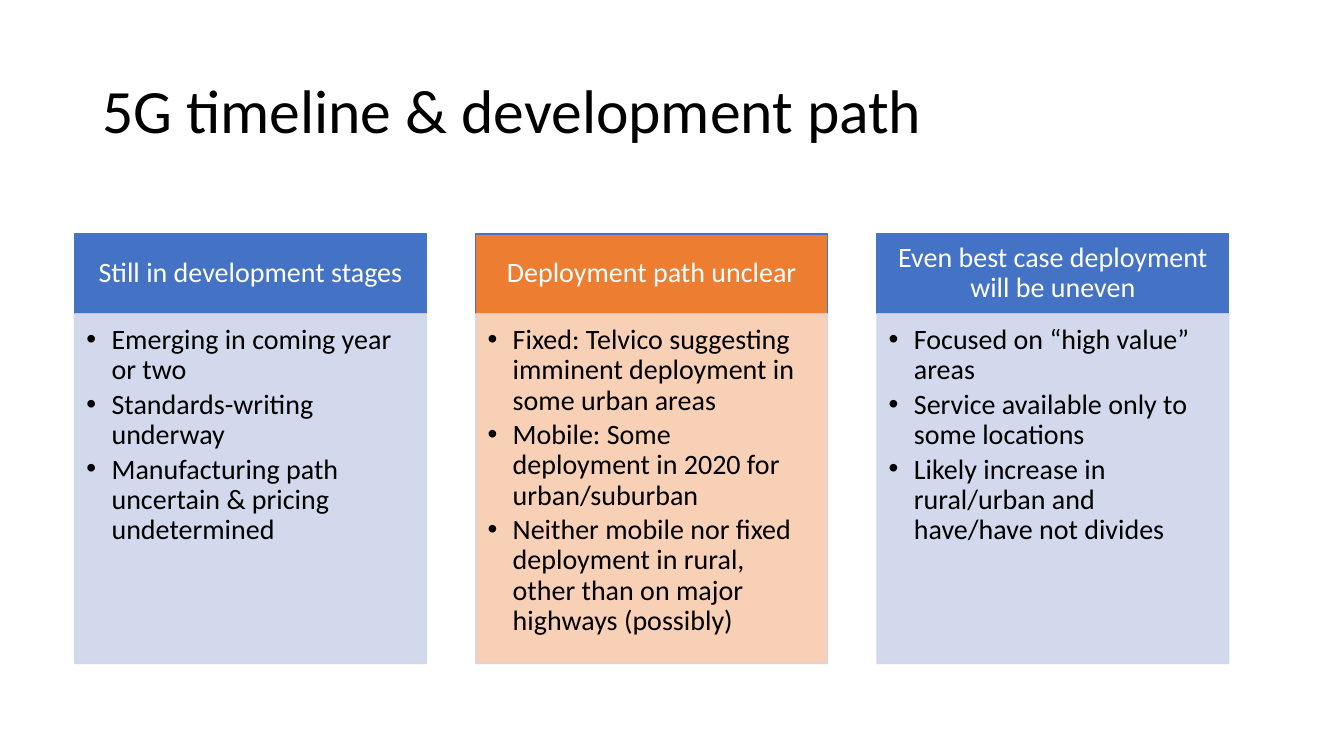
from dataclasses import dataclass

from lxml.etree import SubElement
from pptx import Presentation
from pptx.dml.color import RGBColor
from pptx.enum.shapes import MSO_SHAPE as Preset
from pptx.enum.text import MSO_ANCHOR as Anchor, MSO_AUTO_SIZE as AutoSize, PP_ALIGN as Align
from pptx.oxml.ns import qn
from pptx.shapes.autoshape import Shape
from pptx.slide import Slide
from pptx.text.text import TextFrame
from pptx.util import Pt

COLORS: dict[str, str] = {
    "black": "000000",
    "white": "FFFFFF",
    "blue": "4472C4",
    "orange": "ED7D31",
    "pale blue": "CFD5EA",
    "pale orange": "F8CBAD",
}
FONT = "Calibri"
COLUMN_LEFT = 53.28
COLUMN_PITCH = 286.56
COLUMN_WIDTH = 251.28
HEADER_TOP, HEADER_HEIGHT = 167.04, 57.1
BODY_TOP, BODY_HEIGHT = 224.14, 249.7
BULLET_INDENT = 18


@dataclass(frozen=True)
class Column:
    heading: str
    points: tuple[str, ...]
    header_fill: str = "blue"
    body_fill: str = "pale blue"


COLUMNS = (
    Column(
        "Still in development stages",
        (
            "Emerging in coming year or two",
            "Standards-writing underway",
            "Manufacturing path uncertain & pricing undetermined",
        ),
    ),
    Column(
        "Deployment path unclear",
        (
            "Fixed: Telvico suggesting imminent deployment in some urban areas",
            "Mobile: Some deployment in 2020 for urban/suburban",
            "Neither mobile nor fixed deployment in rural, other than on major highways (possibly)",
        ),
        "orange",
        "pale orange",
    ),
    Column(
        "Even best case deployment will be uneven",
        (
            "Focused on “high value” areas",
            "Service available only to some locations",
            "Likely increase in rural/urban and have/have not divides",
        ),
    ),
)


def color(name: str) -> RGBColor:
    return RGBColor.from_string(COLORS[name])


def write(frame: TextFrame, *texts: str, size: float = 20, ink: str = "black",
          align: Align = Align.LEFT, anchor: Anchor = Anchor.TOP,
          margins: tuple[float, float, float, float] = (7.2, 3.6, 7.2, 3.6),
          space_after: float = 0, bullet: bool = False) -> None:
    frame.word_wrap = True
    frame.auto_size = AutoSize.NONE
    frame.vertical_anchor = anchor
    (frame.margin_left, frame.margin_top,
     frame.margin_right, frame.margin_bottom) = map(Pt, margins)
    for index, text in enumerate(texts):
        para = frame.add_paragraph() if index else frame.paragraphs[0]
        para.alignment = align
        para.line_spacing = 0.9
        para.space_before = Pt(0)
        para.space_after = Pt(space_after)
        span = para.add_run()
        span.text = text
        span.font.name = FONT
        span.font.size = Pt(size)
        span.font.color.rgb = color(ink)
        if bullet:
            para.level = 1
            properties = para._p.get_or_add_pPr()
            properties.set("marL", str(Pt(BULLET_INDENT)))
            properties.set("indent", str(-Pt(BULLET_INDENT)))
            SubElement(properties, qn("a:buFont"), typeface="Arial")
            SubElement(properties, qn("a:buChar"), char="•")


def add_box(page: Slide, left: float, top: float, height: float,
            fill: str, line: str, opacity: int = 100) -> Shape:
    box = page.shapes.add_shape(
        Preset.RECTANGLE, Pt(left), Pt(top), Pt(COLUMN_WIDTH), Pt(height))
    box.shadow.inherit = False
    box.fill.solid()
    box.fill.fore_color.rgb = color(fill)
    box.line.color.rgb = color(line)
    box.line.width = Pt(1)
    if opacity < 100:
        for tint in box.element.spPr.iter(qn("a:srgbClr")):
            SubElement(tint, qn("a:alpha"), val=str(opacity * 1000))
    return box


def add_column(page: Slide, column: Column, left: float) -> None:
    header = add_box(page, left, HEADER_TOP, HEADER_HEIGHT, column.header_fill, "blue")
    write(header.text_frame, column.heading, ink="white", align=Align.CENTER,
          anchor=Anchor.MIDDLE, margins=(11.2, 6.4, 11.2, 6.4))
    body = add_box(page, left, BODY_TOP, BODY_HEIGHT, column.body_fill, "pale blue", 90)
    write(body.text_frame, *column.points, margins=(8.4, 8.4, 11.2, 12.6),
          space_after=3, bullet=True)


def add_title(page: Slide, text: str) -> None:
    title = page.shapes.title
    title.left, title.top, title.width, title.height = map(Pt, (66, 28.8, 828, 104.4))
    write(title.text_frame, text, size=44, anchor=Anchor.MIDDLE)


def main() -> None:
    deck = Presentation()
    deck.slide_width, deck.slide_height = Pt(960), Pt(540)
    page = deck.slides.add_slide(deck.slide_layouts.get_by_name("Title Only"))
    add_title(page, "5G timeline & development path")
    for index, column in enumerate(COLUMNS):
        add_column(page, column, COLUMN_LEFT + index * COLUMN_PITCH)
    deck.save("out.pptx")


if __name__ == "__main__":
    main()
